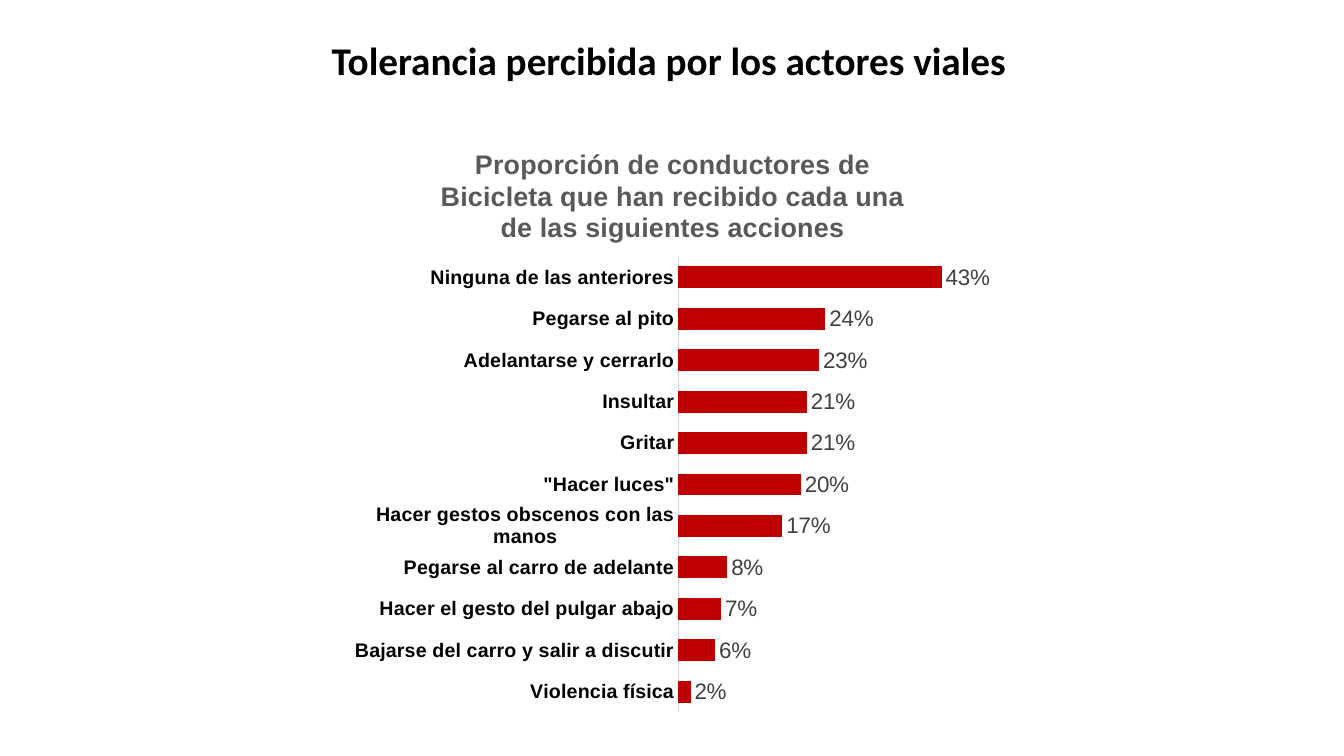
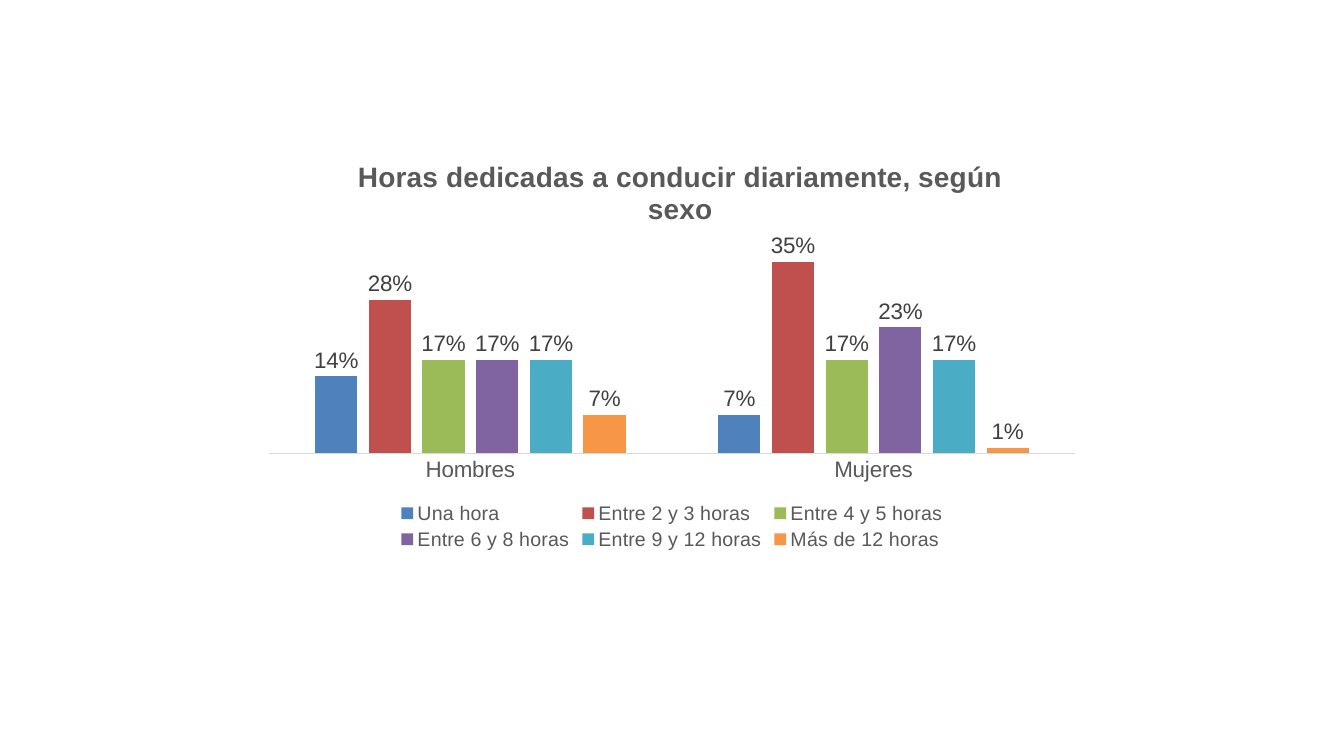
from pptx import Presentation
from pptx.chart.data import CategoryChartData
from pptx.dml.color import RGBColor
from pptx.enum.chart import (XL_CHART_TYPE, XL_LABEL_POSITION,
                             XL_LEGEND_POSITION, XL_TICK_MARK)
from pptx.enum.text import MSO_ANCHOR, PP_ALIGN
from pptx.oxml import parse_xml
from pptx.oxml.ns import nsdecls, qn
from pptx.util import Inches, Pt

BLACK, GREY, DARK, RULE = "000000", "595959", "404040", "D9D9D9"
TITLE_ONLY, BLANK = 5, 6


def color(code):
    return RGBColor.from_string(code)


def place(part, index, inner=False, **spots):
    """Give a chart part a fixed place, in fractions of the chart."""
    for old in part.findall(qn("c:layout")):
        part.remove(old)
    target = '<c:layoutTarget val="inner"/>' if inner else ""
    modes = "".join(f'<c:{key}Mode val="edge"/>' for key in "xy")
    sizes = "".join(f'<c:{key} val="{val}"/>' for key, val in spots.items())
    part.insert(index, parse_xml(
        f'<c:layout {nsdecls("c")}><c:manualLayout>{target}{modes}{sizes}'
        f'</c:manualLayout></c:layout>'))


class Deck:
    def __init__(self):
        self.prs = Presentation()
        self.prs.slide_width = Inches(13.33)
        self.prs.slide_height = Inches(7.5)
        self.slide = None

    def add(self, layout):
        self.slide = self.prs.slides.add_slide(self.prs.slide_layouts[layout])

    def style(self, font, size, code, bold=False, name="Arial"):
        look = {"name": name, "size": Pt(size), "bold": bold}
        for key, val in look.items():
            setattr(font, key, val)
        font.color.rgb = color(code)

    def title(self, text, left, top, width, height):
        shape = self.slide.shapes.title
        box = {"left": left, "top": top, "width": width, "height": height}
        for key, val in box.items():
            setattr(shape, key, Inches(val))
        frame = shape.text_frame
        frame.text = text
        frame.word_wrap = True
        frame.vertical_anchor = MSO_ANCHOR.TOP
        para = frame.paragraphs[0]
        para.alignment = PP_ALIGN.LEFT
        self.style(para.runs[0].font, 28, BLACK, True, "Calibri")

    def chart(self, kind, box, cats, series, peak, gap, overlap=0):
        """Series maps each name to its colour and values."""
        data = CategoryChartData(number_format="0%")
        data.categories = cats
        for name, (_, vals) in series.items():
            data.add_series(name, vals)
        spot = [Inches(val) for val in box]
        chart = self.slide.shapes.add_chart(kind, *spot, data).chart
        self.style(chart.font, 16, BLACK)
        chart.has_legend = False

        # Bars and their labels
        plot = chart.plots[0]
        plot.vary_by_categories = False
        plot.gap_width, plot.overlap = gap, overlap
        for item, (code, _) in zip(plot.series, series.values()):
            item.format.fill.solid()
            item.format.fill.fore_color.rgb = color(code)
            item.invert_if_negative = False
            labels = item.data_labels
            labels.show_value = True
            labels.number_format = "0%"
            labels.number_format_is_linked = False
            labels.position = XL_LABEL_POSITION.OUTSIDE_END
            self.style(labels.font, 16, DARK)

        # Axes
        axis = chart.value_axis
        axis.has_major_gridlines = False
        axis.visible = False
        axis.minimum_scale, axis.maximum_scale = 0, peak
        axis = chart.category_axis
        axis.major_tick_mark = XL_TICK_MARK.NONE
        axis.format.line.color.rgb = color(RULE)
        axis.format.line.width = Pt(0.75)
        return chart

    def head(self, chart, text, size, **spots):
        chart.has_title = True
        head = chart.chart_title
        head.text_frame.text = text
        head.include_in_layout = False
        run = head.text_frame.paragraphs[0].runs[0]
        self.style(run.font, size, GREY, True)
        place(head._element, 1, **spots)

    def area(self, chart, **spots):
        place(chart._chartSpace.chart.plotArea, 0, True, **spots)

    def legend(self, chart):
        chart.has_legend = True
        chart.legend.position = XL_LEGEND_POSITION.BOTTOM
        chart.legend.include_in_layout = False
        self.style(chart.legend.font, 14, GREY)


def main():
    deck = Deck()

    # Slide 1: actions received by cyclists
    acts = {
        "Violencia física": 0.02,
        "Bajarse del carro y salir a discutir": 0.06,
        "Hacer el gesto del pulgar abajo": 0.07,
        "Pegarse al carro de adelante": 0.08,
        "Hacer gestos obscenos con las manos": 0.17,
        '"Hacer luces"': 0.2,
        "Gritar": 0.21,
        "Insultar": 0.21,
        "Adelantarse y cerrarlo": 0.23,
        "Pegarse al pito": 0.24,
        "Ninguna de las anteriores": 0.43,
    }
    deck.add(TITLE_ONLY)
    deck.title("Tolerancia percibida por los actores viales",
               3.19, 0.31, 6.97, 0.57)
    chart = deck.chart(XL_CHART_TYPE.BAR_CLUSTERED, (3.5, 1.16, 6.33, 6.03),
                       list(acts), {"Series 1": ("C00000", acts.values())},
                       peak=0.5, gap=90)
    deck.style(chart.category_axis.tick_labels.font, 14, BLACK, True)
    deck.head(chart, "Proporción de conductores de Bicicleta que han recibido "
              "cada una de las siguientes acciones", 19.2, x=0.13, y=0.04)
    deck.area(chart, x=0.51, y=0.23, w=0.48, h=0.75)

    # Slide 2: daily driving hours by sex
    hours = {
        "Una hora": ("4F81BD", (0.14, 0.07)),
        "Entre 2 y 3 horas": ("C0504D", (0.28, 0.35)),
        "Entre 4 y 5 horas": ("9BBB59", (0.17, 0.17)),
        "Entre 6 y 8 horas": ("8064A2", (0.17, 0.23)),
        "Entre 9 y 12 horas": ("4BACC6", (0.17, 0.17)),
        "Más de 12 horas": ("F79646", (0.07, 0.01)),
    }
    deck.add(BLANK)
    chart = deck.chart(XL_CHART_TYPE.COLUMN_CLUSTERED,
                       (2.5, 1.32, 8.33, 4.18), ["Hombres", "Mujeres"], hours,
                       peak=0.4, gap=219, overlap=-27)
    deck.style(chart.category_axis.tick_labels.font, 16, GREY)
    deck.head(chart, "Horas dedicadas a conducir diariamente, según sexo",
              20, x=0.12, y=0.05)
    deck.area(chart, x=0.02, y=0.24, w=0.96, h=0.52)
    deck.legend(chart)

    deck.prs.save("out.pptx")


if __name__ == "__main__":
    main()
